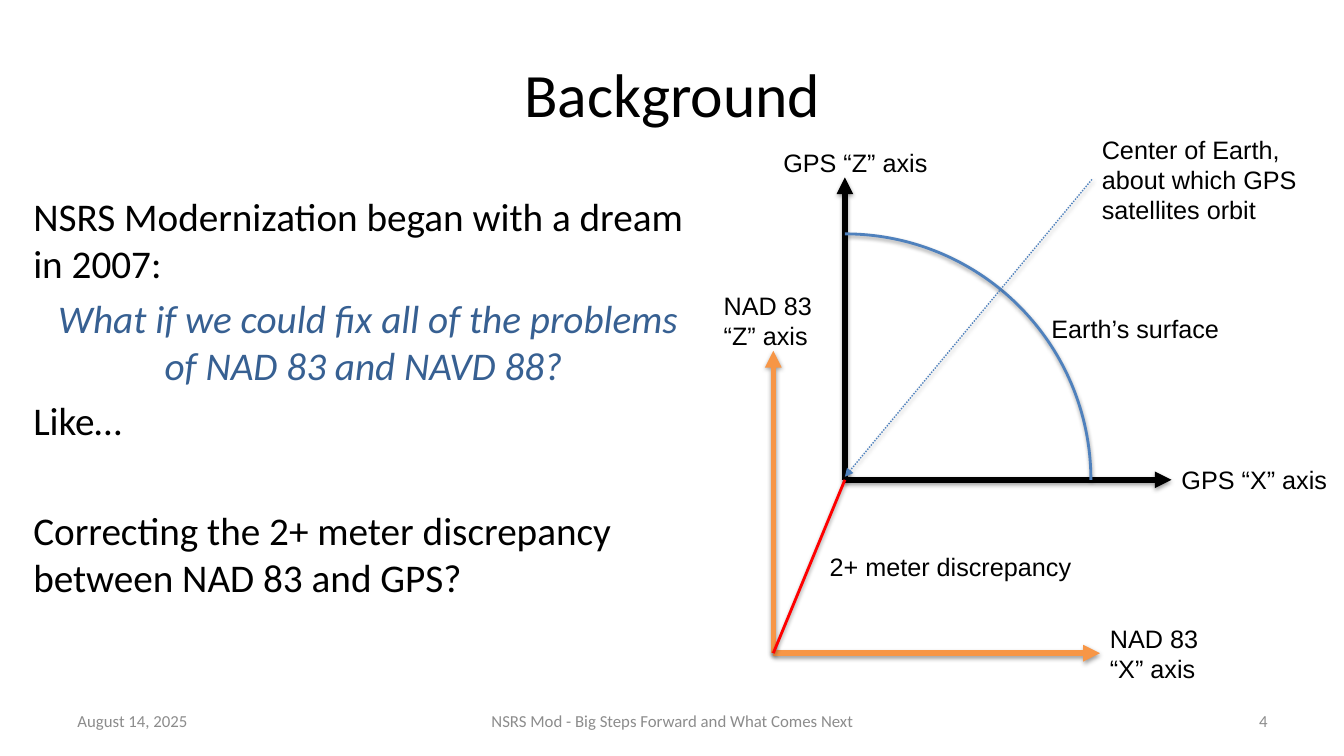
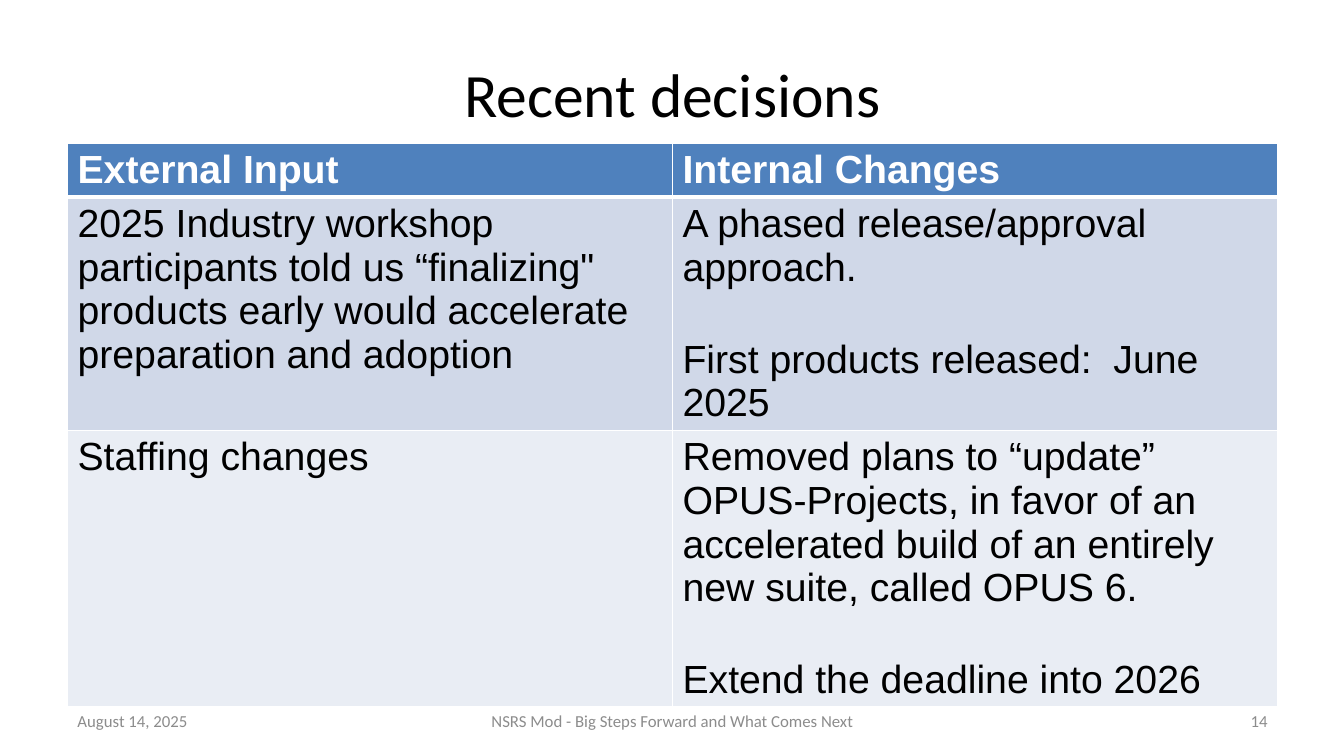
from dataclasses import dataclass
from typing import NamedTuple, Optional

from lxml.etree import SubElement as Sub
from pptx import Presentation
from pptx.dml.color import RGBColor as Rgb
from pptx.enum.dml import MSO_LINE as Dash
from pptx.enum.shapes import MSO_CONNECTOR as Conn, MSO_SHAPE as Geo
from pptx.enum.text import MSO_ANCHOR as Anchor, PP_ALIGN as Align
from pptx.oxml.ns import qn
from pptx.util import Inches, Pt


@dataclass(frozen=True)
class Theme:
    head: str = "Calibri"
    text: str = "Arial"
    title: int = 44
    body: int = 28
    label: int = 18
    foot: int = 12
    black: str = "000000"
    white: str = "FFFFFF"
    gray: str = "8C8C8C"
    blue: str = "4F81BD"
    navy: str = "376092"
    orange: str = "F79646"
    red: str = "FF0000"
    bands: tuple = ("4F81BD", "D0D8E8", "E9EDF4")


T = Theme()


class Box(NamedTuple):
    x: float
    y: float
    w: float
    h: float


class Label(NamedTuple):
    lines: tuple
    box: Box
    wrap: bool = False


class Line(NamedTuple):
    start: tuple
    end: tuple
    color: str
    width: float
    arrow: bool = True
    dash: Optional[Dash] = None
    tie: str = ""  # label joined at its left side
    lead: bool = False  # the label is at the start


class Para(NamedTuple):
    text: str
    gap: float = 0
    color: str = T.black
    italic: bool = False
    align: Align = Align.LEFT


# Shared parts
DATE = "August 14, 2025"
TALK = "NSRS Mod - Big Steps Forward and What Comes Next"
TITLE = Box(0.67, 0.3, 12, 1.25)


def span(box: Box) -> tuple:
    return tuple(Inches(v) for v in box)


def place(shape, box: Box) -> None:
    shape.left, shape.top, shape.width, shape.height = span(box)


def style(para, face: str, size: int, color: str, bold: bool = False,
          italic: bool = False) -> None:
    font = para.font
    font.name, font.size = face, Pt(size)
    font.bold, font.italic = bold, italic
    font.color.rgb = Rgb.from_string(color)


def write(slide, lines: tuple, box: Box, face: str, size: int, color: str,
          align: Align = Align.LEFT, wrap: bool = True,
          anchor: Anchor = Anchor.TOP):
    shape = slide.shapes.add_textbox(*span(box))
    frame = shape.text_frame
    frame.word_wrap, frame.vertical_anchor = wrap, anchor
    frame.text = "\n".join(lines)
    for para in frame.paragraphs:
        para.alignment = align
        style(para, face, size, color)
    return shape


def start(deck, layout: int, title: str):
    slide = deck.slides.add_slide(deck.slide_layouts[layout])
    head = slide.shapes.title
    place(head, TITLE)
    head.text_frame.text = title
    head.text_frame.vertical_anchor = Anchor.MIDDLE
    para = head.text_frame.paragraphs[0]
    para.alignment = Align.CENTER
    style(para, T.head, T.title, T.black)
    return slide


def footer(slide, page: int) -> None:
    for text, x, w, align in ((DATE, 0.67, 3.11, Align.LEFT),
                              (TALK, 4.56, 4.22, Align.CENTER),
                              (str(page), 9.56, 3.11, Align.RIGHT)):
        write(slide, (text,), Box(x, 6.95, w, 0.4), T.head, T.foot, T.gray,
              align, anchor=Anchor.MIDDLE)


def stroke(shape, color: str, width: float) -> None:
    """Set the line and the soft shadow below it."""
    shape.line.color.rgb = Rgb.from_string(color)
    shape.line.width = Pt(width)
    effect = Sub(shape.element.spPr, qn("a:effectLst"))
    shade = Sub(effect, qn("a:outerShdw"), blurRad="40000", dist="20000",
                dir="5400000", rotWithShape="0")
    tint = Sub(shade, qn("a:srgbClr"), val=T.black)
    Sub(tint, qn("a:alpha"), val="38000")


def draw(slide, line: Line, tags: dict) -> None:
    ends = [Inches(v) for v in line.start + line.end]
    link = slide.shapes.add_connector(Conn.STRAIGHT, *ends)
    if line.tie:
        join = link.begin_connect if line.lead else link.end_connect
        join(tags[line.tie], 1)
    stroke(link, line.color, line.width)
    if line.dash:
        link.line.dash_style = line.dash
    if line.arrow:
        Sub(link.element.spPr.find(qn("a:ln")), qn("a:tailEnd"),
            type="triangle")


# Background slide
PARAS = (
    Para("NSRS Modernization began with a dream in 2007:"),
    Para(" What if we could fix all of the problems of NAD 83 and NAVD 88?",
         5.6, T.navy, True, Align.CENTER),
    Para("Like…", 5.6),
    Para("Correcting the 2+ meter discrepancy between NAD 83 and GPS?", 45),
)
LABELS = {
    "earth": Label(("Earth’s surface",), Box(10.33, 3.06, 1.88, 0.4)),
    "gps z": Label(("GPS “Z” axis",), Box(7.67, 1.41, 1.65, 0.4)),
    "gps x": Label(("GPS “X” axis",), Box(11.62, 4.56, 1.66, 0.4)),
    "center": Label(("Center of Earth, about which GPS satellites orbit",),
                    Box(10.83, 1.28, 2.34, 1), True),
    "nad z": Label(("NAD 83", "“Z” axis"), Box(7.08, 2.83, 1.23, 0.7)),
    "nad x": Label(("NAD 83", "“X” axis"), Box(10.91, 6.13, 1.23, 0.7)),
    "gap": Label(("2+ meter discrepancy",), Box(8.13, 5.42, 2.62, 0.4)),
}
GPS, NAD = (8.38, 4.76), (7.67, 6.48)
REACH, RISE, RADIUS = 3.24, 3, 2.44


def axes(base: tuple, color: str, tie: str) -> tuple:
    x, y = base
    return (Line(base, (x, y - RISE), color, 4),
            Line(base, (x + REACH, y), color, 4, tie=tie))


def background(deck) -> None:
    slide = start(deck, 1, "Background")
    body = slide.placeholders[1]
    place(body, Box(0.23, 1.86, 6.75, 4.95))
    frame = body.text_frame
    frame.text = "\n".join(item.text for item in PARAS)
    for para, item in zip(frame.paragraphs, PARAS):
        props = para._p.get_or_add_pPr()
        props.set("marL", "0")
        props.set("indent", "0")
        Sub(props, qn("a:buNone"))
        para.alignment, para.space_before = item.align, Pt(item.gap)
        style(para, T.head, T.body, item.color, italic=item.italic)

    # Diagram labels
    tags = {key: write(slide, tag.lines, tag.box, T.text, T.label, T.black,
                       wrap=tag.wrap)
            for key, tag in LABELS.items()}

    # Axes, Earth's surface and pointers
    for line in axes(GPS, T.black, "gps x"):
        draw(slide, line, tags)
    x, y = GPS
    side = 2 * RADIUS
    arc = slide.shapes.add_shape(
        Geo.ARC, *span(Box(x - RADIUS, y - RADIUS, side, side)))
    arc.fill.background()
    stroke(arc, T.blue, 2)
    for line in (*axes(NAD, T.orange, "nad x"),
                 Line((10.83, 1.78), (8.38, 4.73), T.blue, 1,
                      dash=Dash.ROUND_DOT, tie="center", lead=True),
                 Line(GPS, NAD, T.red, 2, arrow=False)):
        draw(slide, line, tags)
    footer(slide, 4)


# Decisions slide
ROWS = (
    (("External Input",), ("Internal Changes",)),
    (("2025 Industry workshop participants told us “finalizing\" products "
      "early would accelerate preparation and adoption",),
     ("A phased release/approval approach.",
      "First products released:  June 2025")),
    (("Staffing changes",),
     ("Removed plans to “update” OPUS-Projects, in favor of an accelerated "
      "build of an entirely new suite, called OPUS 6.",
      "Extend the deadline into 2026")),
)
ROW = 0.41  # least height; rows grow with their text


def border(cell, row: int) -> None:
    props = cell._tc.get_or_add_tcPr()
    for side in "LRTB":
        width = Pt(3 if (row, side) == (0, "B") else 1)
        edge = Sub(props, qn(f"a:ln{side}"), w=str(width))
        Sub(Sub(edge, qn("a:solidFill")), qn("a:srgbClr"), val=T.white)


def decisions(deck) -> None:
    slide = start(deck, 5, "Recent decisions")
    box = Box(0.67, 1.42, 12, 5.43)
    frame = slide.shapes.add_table(len(ROWS), 2, *span(box))
    grid = frame.table
    for r, row in enumerate(ROWS):
        grid.rows[r].height = Inches(ROW)
        for c, lines in enumerate(row):
            cell = grid.cell(r, c)
            border(cell, r)
            cell.fill.solid()
            cell.fill.fore_color.rgb = Rgb.from_string(T.bands[r])
            cell.text = "\n".join(lines)
            for i, para in enumerate(cell.text_frame.paragraphs):
                if i:
                    para.space_before = Pt(34.5)
                style(para, T.text, T.body, T.black if r else T.white,
                      bold=r == 0)
    frame.height = Inches(box.h)
    footer(slide, 14)


def main() -> None:
    deck = Presentation()
    deck.slide_width, deck.slide_height = Inches(13.33), Inches(7.5)
    background(deck)
    decisions(deck)
    deck.save("out.pptx")


if __name__ == "__main__":
    main()
